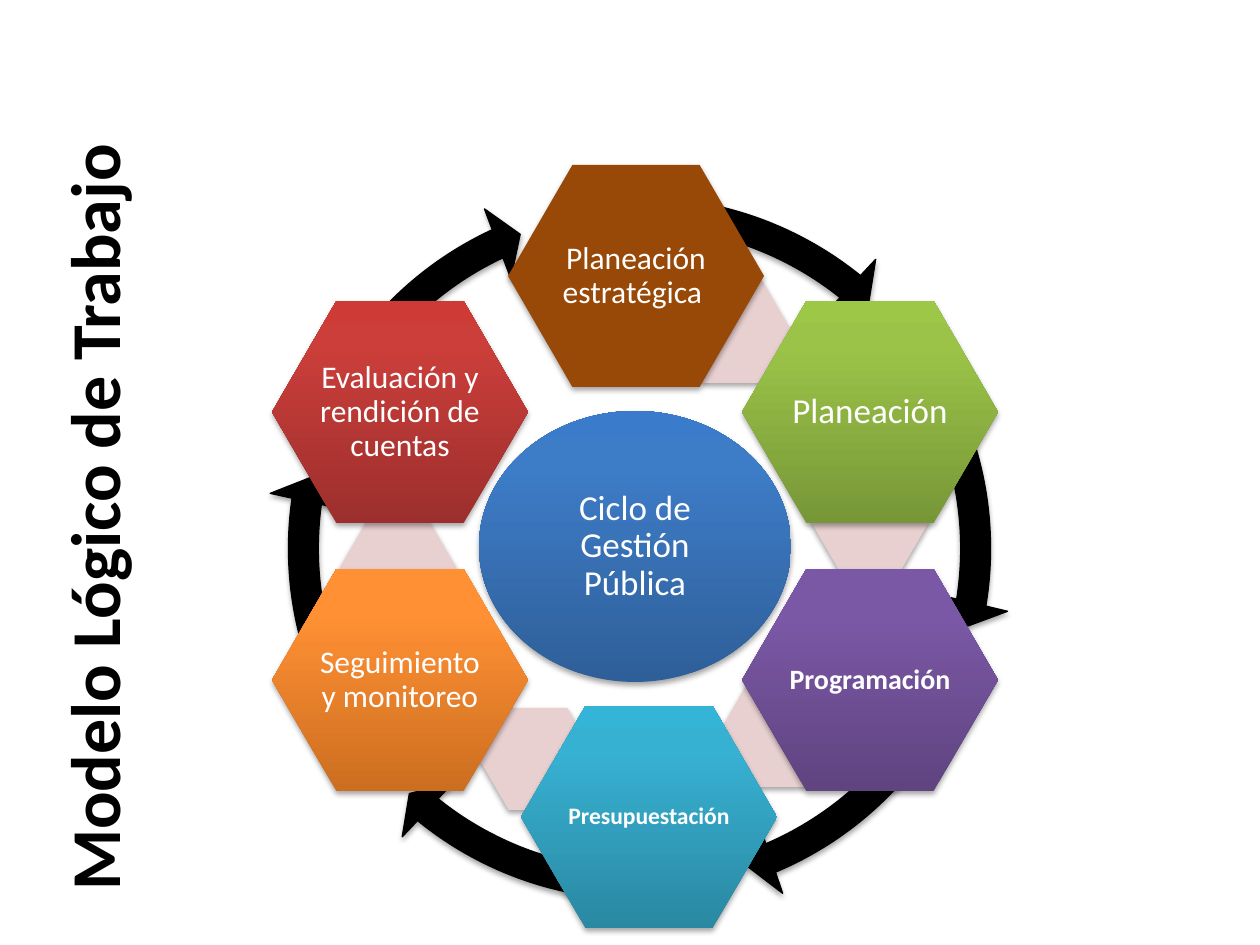
from copy import deepcopy
from dataclasses import dataclass
from typing import Optional

from lxml.etree import SubElement
from pptx import Presentation
from pptx.dml.color import RGBColor as Rgb
from pptx.enum.shapes import MSO_SHAPE as Preset
from pptx.enum.text import MSO_ANCHOR as Anchor, MSO_AUTO_SIZE as AutoSize, PP_ALIGN as Align
from pptx.oxml.ns import qn
from pptx.util import Emu, Pt

PX_PER_INCH = 126


@dataclass(frozen=True)
class Theme:
    font: str = "Calibri"
    black: str = "000000"
    white: str = "FFFFFF"
    link: str = "E8D0D0"
    hub: tuple = ("2F5F99", "3D7CC7", "3A7CCB")
    brown: tuple = ("984807",)
    green: tuple = ("779737", "9BC348", "9DC746")
    purple: tuple = ("5F4480", "7B58A6", "7C57A8")
    teal: tuple = ("2A88A2", "37B1D2", "34B4D6")
    orange: tuple = ("CC6E20", "FF9034", "FF9136")
    red: tuple = ("9C2F2D", "CB3E3A", "CE3B37")
    stops: tuple = (0, 0.8, 1)
    title_size: float = 40
    large: float = 20
    medium: float = 18
    small: float = 16
    tiny: float = 13.5


THEME = Theme()


@dataclass(frozen=True)
class Box:
    left: int
    top: int
    width: int
    height: int

    def emu(self) -> list:
        return [px(value) for value in (self.left, self.top, self.width, self.height)]


@dataclass(frozen=True)
class Arrow:
    rotation: float
    head: float
    tail: float


@dataclass(frozen=True)
class Stage:
    text: str
    left: int
    top: int
    colors: tuple
    size: float
    bold: bool = False
    link: Optional[tuple] = None


RING = Box(266, 175, 747, 747)
HUB = Box(479, 411, 312, 271)
TITLE = Box(-329, 469, 843, 97)
STAGE_SIZE = (256, 222)
LINK_SIZE = (118, 102)
LEFT, RIGHT, UPPER, LOWER = 272, 742, 301, 569

# Head and tail are the preset's adjustment values, before rotation.
ARROWS = [
    Arrow(26.4, 205.72, 189.84),
    Arrow(27.6, 23.66, 7.77),
    Arrow(27.2, 61.1, 44.39),
    Arrow(25.2, 97.72, 81.84),
    Arrow(25.6, 131.66, 115.77),
    Arrow(27, 169.1, 152.39),
]

STAGES = [
    Stage("Planeación estratégica ", 508, 165, THEME.brown, THEME.medium, link=(674, 281)),
    Stage("Planeación", RIGHT, UPPER, THEME.green, THEME.large, link=(811, 471)),
    Stage("Programación", RIGHT, LOWER, THEME.purple, THEME.small, True, (717, 685)),
    Stage("Presupuestación", 521, 706, THEME.teal, THEME.tiny, True, (479, 708)),
    Stage("Seguimiento y monitoreo", LEFT, LOWER, THEME.orange, THEME.medium, link=(339, 518)),
    Stage("Evaluación y rendición de cuentas", LEFT, UPPER, THEME.red, THEME.medium),
]


def px(value: int) -> Emu:
    return Emu(round(value * 914400 / PX_PER_INCH))


def add_shadow(shape) -> None:
    shape.shadow.inherit = False
    effects = shape._element.spPr.find(qn("a:effectLst"))
    outer = SubElement(effects, qn("a:outerShdw"), blurRad="40000", dist="23000",
                       dir="5400000", rotWithShape="0")
    color = SubElement(outer, qn("a:srgbClr"), val=THEME.black)
    SubElement(color, qn("a:alpha"), val="35000")


def paint(shape, colors: tuple) -> None:
    """Fill with one colour, or with a gradient rising from the bottom."""
    if len(colors) == 1:
        shape.fill.solid()
        shape.fill.fore_color.rgb = Rgb.from_string(colors[0])
        return
    shape.fill.gradient()
    shape.fill.gradient_angle = 90
    stop_list = next(shape._element.spPr.iter(qn("a:gsLst")))
    stop_list.append(deepcopy(stop_list[-1]))
    for stop, color, position in zip(shape.fill.gradient_stops, colors, THEME.stops):
        stop.color.rgb = Rgb.from_string(color)
        stop.position = position


def add_figure(slide, preset: Preset, box: Box, colors: tuple, adjustments: tuple = ()):
    shape = slide.shapes.add_shape(preset, *box.emu())
    for index, value in enumerate(adjustments):
        shape.adjustments[index] = value
    paint(shape, colors)
    shape.line.fill.background()
    add_shadow(shape)
    return shape


def write(shape, text: str, size: float, color: str, bold: bool = False):
    frame = shape.text_frame
    frame.word_wrap = True
    paragraph = frame.paragraphs[0]
    paragraph.text = text
    paragraph.alignment = Align.CENTER
    font = paragraph.font
    font.name, font.size, font.bold = THEME.font, Pt(size), bold
    font.color.rgb = Rgb.from_string(color)
    return frame


def write_label(shape, text: str, size: float, bold: bool = False) -> None:
    frame = write(shape, text, size, THEME.white, bold)
    frame.vertical_anchor = Anchor.MIDDLE
    frame.margin_left = frame.margin_right = frame.margin_top = frame.margin_bottom = px(3)
    frame.paragraphs[0].line_spacing = 0.9


def add_arrow(slide, arrow: Arrow) -> None:
    shape = add_figure(slide, Preset.CIRCULAR_ARROW, RING, (THEME.black,),
                       (0.04, 2.5, arrow.head, arrow.tail, 0.05))
    shape.rotation = arrow.rotation
    shape.line.color.rgb = Rgb.from_string(THEME.black)
    shape.line.width = Pt(0.75)


def add_stage(slide, stage: Stage) -> None:
    if stage.link:
        add_figure(slide, Preset.HEXAGON, Box(*stage.link, *LINK_SIZE), (THEME.link,), (0.29,))
    shape = add_figure(slide, Preset.HEXAGON, Box(stage.left, stage.top, *STAGE_SIZE),
                       stage.colors, (0.29,))
    write_label(shape, stage.text, stage.size, stage.bold)


def add_title(slide) -> None:
    shape = slide.shapes.add_textbox(*TITLE.emu())
    shape.rotation = 270
    frame = write(shape, "Modelo Lógico de Trabajo", THEME.title_size, THEME.black, True)
    frame.auto_size = AutoSize.SHAPE_TO_FIT_TEXT


def main() -> None:
    presentation = Presentation()
    presentation.slide_width, presentation.slide_height = px(1260), px(945)
    slide = presentation.slides.add_slide(presentation.slide_layouts[6])
    for arrow in ARROWS:
        add_arrow(slide, arrow)
    hub = add_figure(slide, Preset.OVAL, HUB, THEME.hub)
    write_label(hub, "Ciclo de Gestión Pública", THEME.large)
    for stage in STAGES:
        add_stage(slide, stage)
    add_title(slide)
    presentation.save("out.pptx")


if __name__ == "__main__":
    main()
